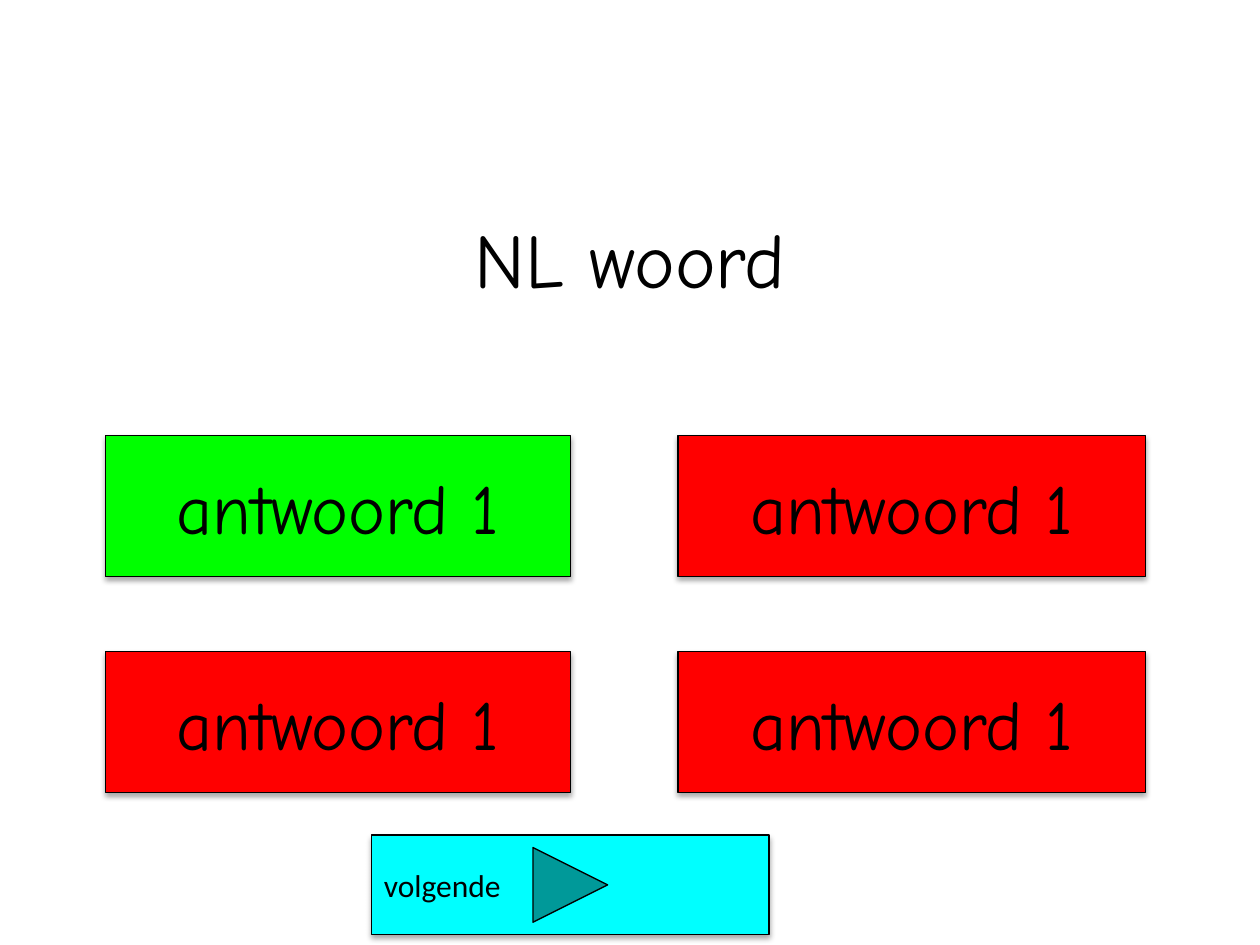
from lxml.etree import SubElement
from pptx import Presentation
from pptx.dml.color import RGBColor
from pptx.enum.shapes import MSO_SHAPE
from pptx.enum.text import MSO_ANCHOR, PP_ALIGN
from pptx.oxml.ns import qn
from pptx.util import Pt


def color(hex_text):
    return RGBColor.from_string(hex_text)


class QuizSlide:
    """Holds the style and the current slide."""

    ink = "000000"
    display_font = "Comic Neue"
    body_font = "Calibri"

    def __init__(self, slide):
        self.slide = slide

    def set_text(self, shape, text, size, font, align):
        frame = shape.text_frame
        frame.word_wrap = True
        frame.vertical_anchor = MSO_ANCHOR.MIDDLE
        para = frame.paragraphs[0]
        para.text = text
        para.alignment = align
        para.font.size = Pt(size)
        para.font.name = font
        para.font.color.rgb = color(self.ink)

    def add_shadow(self, shape):
        shape.shadow.inherit = False
        effects = shape._element.spPr.find(qn("a:effectLst"))
        shadow = SubElement(effects, qn("a:outerShdw"), blurRad=str(Pt(3.15)),
                            dist=str(Pt(1.8)), dir="5400000", rotWithShape="0")
        tone = SubElement(shadow, qn("a:srgbClr"), val=self.ink)
        SubElement(tone, qn("a:alpha"), val="35000")

    def title(self, text, left, top, width, height):
        box = self.slide.shapes.add_textbox(Pt(left), Pt(top), Pt(width), Pt(height))
        self.set_text(box, text, 44, self.display_font, PP_ALIGN.CENTER)

    def button(self, kind, fill, left, top, width, height):
        shape = self.slide.shapes.add_shape(kind, Pt(left), Pt(top), Pt(width), Pt(height))
        shape.fill.solid()
        shape.fill.fore_color.rgb = color(fill)
        shape.line.color.rgb = color(self.ink)
        shape.line.width = Pt(0.75)
        self.add_shadow(shape)
        return shape

    def answer(self, text, fill, left, top, width, height):
        shape = self.button(MSO_SHAPE.RECTANGLE, fill, left, top, width, height)
        self.set_text(shape, text, 40, self.display_font, PP_ALIGN.CENTER)

    def next_button(self, text, fill, left, top, width, height):
        shape = self.button(MSO_SHAPE.ACTION_BUTTON_FORWARD_OR_NEXT, fill,
                            left, top, width, height)
        self.set_text(shape, text, 18, self.body_font, PP_ALIGN.LEFT)


def main():
    deck = Presentation()
    deck.slide_width, deck.slide_height = Pt(720), Pt(540)
    quiz = QuizSlide(deck.slides.add_slide(deck.slide_layouts[6]))

    # Question
    quiz.title("NL woord", 54, 89.3, 612, 115.9)

    # Answers in a two by two grid, the correct one in green
    columns = [(60.3, 265.7), (387.4, 267.1)]
    rows = [248.9, 372.4]
    for row, top in enumerate(rows):
        for column, (left, width) in enumerate(columns):
            fill = "00FF00" if row == column == 0 else "FF0000"
            quiz.answer("antwoord 1", fill, left, top, width, 80.6)

    # Navigation
    quiz.next_button("volgende", "00FFFF", 212.3, 477.2, 227.2, 56.9)

    deck.save("out.pptx")


if __name__ == "__main__":
    main()
